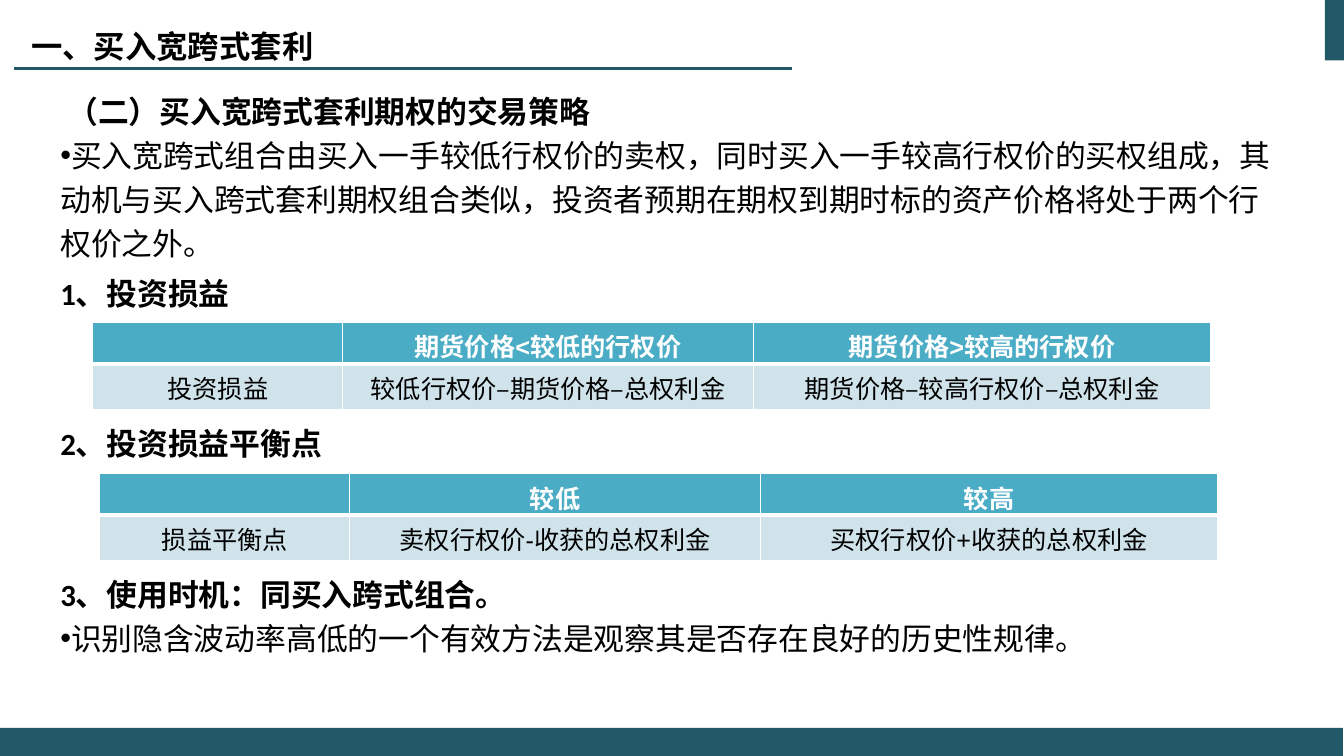
from dataclasses import dataclass

from lxml.etree import SubElement
from pptx import Presentation
from pptx.dml.color import RGBColor
from pptx.enum.shapes import MSO_CONNECTOR, MSO_SHAPE
from pptx.enum.text import MSO_ANCHOR, PP_ALIGN
from pptx.oxml.ns import qn
from pptx.util import Inches, Pt


@dataclass(frozen=True)
class Theme:
    teal: RGBColor = RGBColor(0x21, 0x59, 0x68)
    header: RGBColor = RGBColor(0x4B, 0xAC, 0xC6)
    row: RGBColor = RGBColor(0xD0, 0xE3, 0xEA)
    black: RGBColor = RGBColor(0, 0, 0)
    white: RGBColor = RGBColor(0xFF, 0xFF, 0xFF)
    chinese_font: str = "Noto Sans CJK SC"
    body_font: str = "Calibri"
    table_font: str = "Arial"
    title_size: int = 28
    body_size: int = 22
    table_size: int = 18
    line_pitch: float = 31.4


class SlideBuilder:
    def __init__(self, slide, theme):
        self.slide = slide
        self.theme = theme

    def add_run(self, paragraph, text, font_name, size, color, bold=False):
        run = paragraph.add_run()
        run.text = text
        font = run.font
        font.name, font.size, font.bold = font_name, Pt(size), bold
        font.color.rgb = color
        SubElement(run._r.get_or_add_rPr(), qn("a:ea"), typeface=self.theme.chinese_font)
        return run

    def bar(self, left, top, width, height):
        shape = self.slide.shapes.add_shape(
            MSO_SHAPE.RECTANGLE, Inches(left), Inches(top), Inches(width), Inches(height))
        shape.shadow.inherit = False
        shape.fill.solid()
        shape.fill.fore_color.rgb = self.theme.teal
        shape.line.fill.background()

    def rule(self, left, right, top):
        connector = self.slide.shapes.add_connector(
            MSO_CONNECTOR.STRAIGHT, Inches(left), Inches(top), Inches(right), Inches(top))
        connector.line.color.rgb = self.theme.teal
        connector.line.width = Pt(1.5)
        SubElement(connector._element.spPr, qn("a:effectLst"))

    def text_frame(self, left, top, width, height, anchor):
        box = self.slide.shapes.add_textbox(
            Inches(left), Inches(top), Inches(width), Inches(height))
        frame = box.text_frame
        frame.word_wrap = True
        frame.vertical_anchor = anchor
        return frame

    def title(self, text):
        frame = self.text_frame(0.21, -0.04, 10.88, 0.93, MSO_ANCHOR.MIDDLE)
        theme = self.theme
        run = self.add_run(frame.paragraphs[0], text, theme.chinese_font,
                           theme.title_size, theme.black, bold=True)
        run._r.rPr.set("cap", "small")

    def body(self, entries):
        """Entries are (text, is_bullet, space before in points); headings are bold."""
        theme = self.theme
        frame = self.text_frame(0.5, 0.8, 12.33, 5.9, MSO_ANCHOR.TOP)
        for index, (text, is_bullet, space_before) in enumerate(entries):
            paragraph = frame.add_paragraph() if index else frame.paragraphs[0]
            paragraph.line_spacing = Pt(theme.line_pitch)
            paragraph.space_before = Pt(space_before)
            if is_bullet:
                properties = paragraph._p.get_or_add_pPr()
                SubElement(properties, qn("a:buFont"), typeface="Arial")
                SubElement(properties, qn("a:buChar"), char="•")
            self.add_run(paragraph, text, theme.body_font, theme.body_size,
                         theme.black, bold=not is_bullet)

    def cell_borders(self, cell, widths):
        properties = cell._tc.get_or_add_tcPr()
        for side, width in widths.items():
            border = SubElement(properties, qn(f"a:ln{side}"), w=str(Pt(width)))
            fill = SubElement(border, qn("a:solidFill"))
            SubElement(fill, qn("a:srgbClr"), val=str(self.theme.white))

    def table(self, left, top, rows):
        theme = self.theme
        column_widths = (2.48, 4.07, 4.54)
        row_heights = (0.41, 0.45)
        table = self.slide.shapes.add_table(
            len(rows), len(column_widths), Inches(left), Inches(top),
            Inches(sum(column_widths)), Inches(sum(row_heights))).table
        table.horz_banding = False
        for column, width in zip(table.columns, column_widths):
            column.width = Inches(width)
        for row_index, texts in enumerate(rows):
            table.rows[row_index].height = Inches(row_heights[row_index])
            is_header = row_index == 0
            top_width, bottom_width = (1, 3) if is_header else (3, 1)
            for column_index, text in enumerate(texts):
                cell = table.cell(row_index, column_index)
                self.cell_borders(cell, {"L": 1, "R": 1, "T": top_width, "B": bottom_width})
                cell.fill.solid()
                cell.fill.fore_color.rgb = theme.header if is_header else theme.row
                paragraph = cell.text_frame.paragraphs[0]
                paragraph.alignment = PP_ALIGN.CENTER
                if text:
                    self.add_run(paragraph, text, theme.table_font, theme.table_size,
                                 theme.white if is_header else theme.black, bold=is_header)


def main():
    presentation = Presentation()
    presentation.slide_width = Inches(13.33)
    presentation.slide_height = Inches(7.5)
    slide = presentation.slides.add_slide(presentation.slide_layouts[6])
    builder = SlideBuilder(slide, Theme())

    builder.bar(13.14, 0, 0.19, 0.6)
    builder.rule(0.14, 7.86, 0.68)
    builder.bar(0, 7.22, 13.32, 0.28)
    builder.title("一、买入宽跨式套利")

    heading_gap, table_gap = 4.4, 76
    builder.body([
        (" （二）买入宽跨式套利期权的交易策略", False, 0),
        ("买入宽跨式组合由买入一手较低行权价的卖权，同时买入一手较高行权价的买权组成，"
         "其动机与买入跨式套利期权组合类似，投资者预期在期权到期时标的资产价格将处于"
         "两个行权价之外。", True, 0),
        ("1、投资损益", False, heading_gap),
        ("2、投资损益平衡点", False, table_gap),
        ("3、使用时机：同买入跨式组合。", False, table_gap),
        ("识别隐含波动率高低的一个有效方法是观察其是否存在良好的历史性规律。", True, 0),
    ])
    builder.table(0.92, 3.2, [
        ("", "期货价格<较低的行权价", "期货价格>较高的行权价"),
        ("投资损益", "较低行权价–期货价格–总权利金", "期货价格–较高行权价–总权利金"),
    ])
    builder.table(0.99, 4.7, [
        ("", "较低", "较高"),
        ("损益平衡点", "卖权行权价-收获的总权利金", "买权行权价+收获的总权利金"),
    ])
    presentation.save("out.pptx")


if __name__ == "__main__":
    main()
